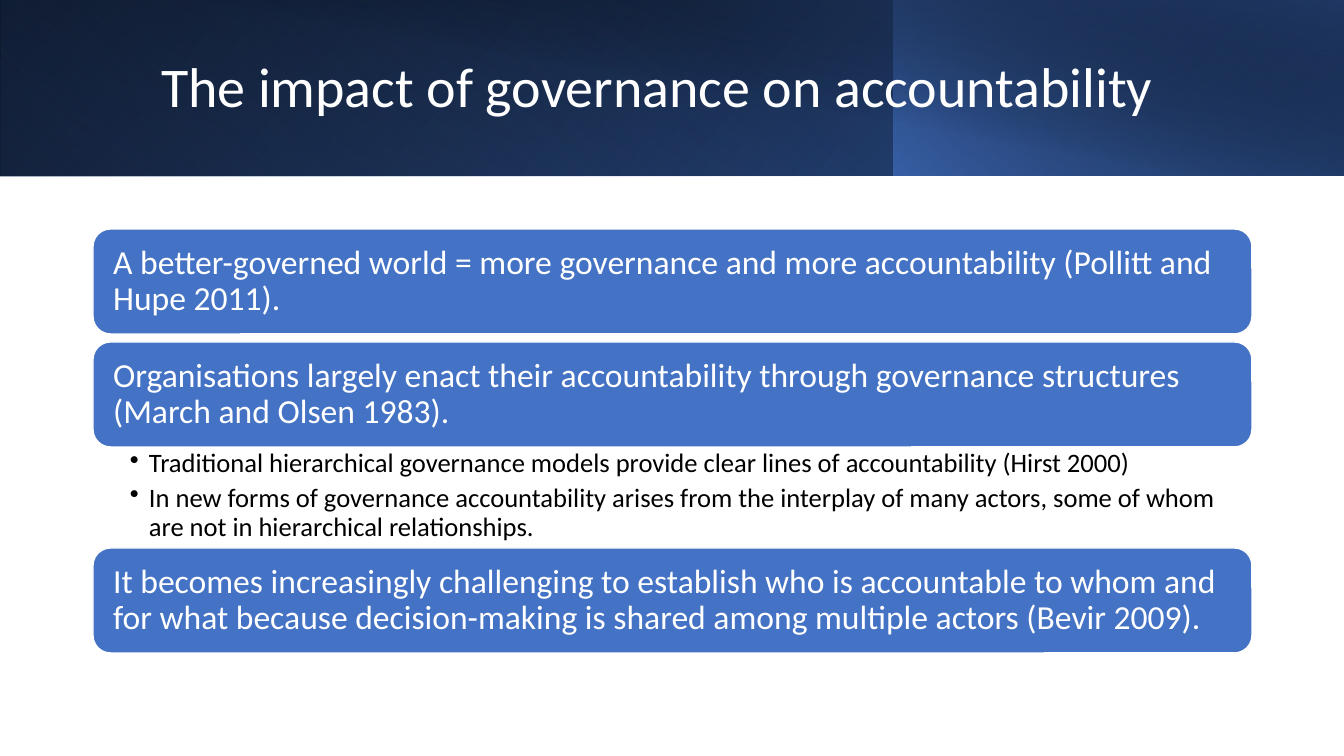
import pptx
import pptx.dml.color
import pptx.enum.shapes
import pptx.enum.text
import pptx.oxml
import pptx.oxml.ns
import pptx.util

PX = 914400 / 100.8
WHITE = pptx.dml.color.RGBColor(0xFF, 0xFF, 0xFF)
BLACK = pptx.dml.color.RGBColor(0x00, 0x00, 0x00)
BLUE = pptx.dml.color.RGBColor(0x44, 0x72, 0xC4)
NAVY = pptx.dml.color.RGBColor(0x20, 0x38, 0x64)
MID_BLUE = pptx.dml.color.RGBColor(0x2F, 0x55, 0x97)
SHAPE = pptx.enum.shapes.MSO_SHAPE
ANCHOR = pptx.enum.text.MSO_ANCHOR


def px(*lengths):
    return [pptx.util.Emu(round(length * PX)) for length in lengths]


def format_text(frame, size, color, space_after, anchor, insets):
    """Set the frame's layout and the look of all its paragraphs; insets run left, top, right, bottom."""
    frame.word_wrap = True
    frame.auto_size = pptx.enum.text.MSO_AUTO_SIZE.NONE
    frame.vertical_anchor = anchor
    (frame.margin_left, frame.margin_top,
     frame.margin_right, frame.margin_bottom) = px(*insets)
    for paragraph in frame.paragraphs:
        paragraph.alignment = pptx.enum.text.PP_ALIGN.LEFT
        paragraph.line_spacing = 0.9
        paragraph.space_after = pptx.util.Pt(space_after)
        paragraph.font.name = "Calibri"
        paragraph.font.size = pptx.util.Pt(size)
        paragraph.font.color.rgb = color


deck = pptx.Presentation()
deck.slide_width, deck.slide_height = px(1344, 756)
slide = deck.slides.add_slide(deck.slide_layouts[5])

title = slide.shapes.title
title.left, title.top, title.width, title.height = px(151, 32, 1091, 114)
title.text_frame.text = "The impact of governance on accountability"
format_text(title.text_frame, 40, WHITE, 0, ANCHOR.MIDDLE, (10, 5, 10, 5))

# Header layers: box, rotation, mirrored, gradient angle, (position, colour, opacity) stops
header_layers = [
    ((0, 0, 1344, 176), 0, True, 140, [(0, BLACK, 100), (100, MID_BLUE, 100)]),
    ((0, 0, 895, 176), 180, True, 230, [(20, BLUE, 0), (100, NAVY, 55)]),
    ((894, 0, 450, 176), 0, True, 220, [(0, BLUE, 66), (100, BLACK, 30)]),
    ((50, 0, 1294, 176), 0, False, 280, [(50, BLACK, 0), (99, NAVY, 52)]),
]
for box, rotation, mirrored, angle, stops in header_layers:
    layer = slide.shapes.add_shape(SHAPE.RECTANGLE, *px(*box))
    layer.shadow.inherit = False
    layer.line.fill.background()
    layer.rotation = rotation
    properties = layer.element.spPr
    if mirrored:
        properties.find(pptx.oxml.ns.qn("a:xfrm")).set("flipH", "1")
    stop_xml = "".join(
        f'<a:gs pos="{position * 1000}"><a:srgbClr val="{color}">'
        f'<a:alpha val="{opacity * 1000}"/></a:srgbClr></a:gs>'
        for position, color, opacity in stops)
    gradient = pptx.oxml.parse_xml(
        f'<a:gradFill {pptx.oxml.ns.nsdecls("a")} rotWithShape="1"><a:gsLst>{stop_xml}</a:gsLst>'
        f'<a:lin ang="{angle * 60000}" scaled="0"/></a:gradFill>')
    properties.find(pptx.oxml.ns.qn("a:prstGeom")).addnext(gradient)
    title.element.addprevious(layer.element)

statements = [
    (229, "A better-governed world = more governance and more accountability (Pollitt and Hupe 2011)."),
    (342, "Organisations largely enact their accountability through governance structures "
          "(March and Olsen 1983)."),
    (548, "It becomes increasingly challenging to establish who is accountable to whom and for what "
          "because decision-making is shared among multiple actors (Bevir 2009)."),
]
for top, statement in statements:
    panel = slide.shapes.add_shape(SHAPE.ROUNDED_RECTANGLE, *px(93, top, 1159, 105))
    panel.shadow.inherit = False
    panel.fill.solid()
    panel.fill.fore_color.rgb = BLUE
    panel.line.color.rgb = WHITE
    panel.line.width = pptx.util.Pt(1)
    panel.text_frame.text = statement
    format_text(panel.text_frame, 24, WHITE, 0, ANCHOR.MIDDLE, (15, 15, 15, 15))

details = slide.shapes.add_textbox(*px(93, 447, 1159, 102)).text_frame
details.text = "\n".join([
    "Traditional hierarchical governance models provide clear lines of accountability (Hirst 2000)",
    "In new forms of governance accountability arises from the interplay of many actors, "
    "some of whom are not in hierarchical relationships.",
])
format_text(details, 19, BLACK, 4, ANCHOR.TOP, (37, 3, 19, 3))
hanging_indent = px(19)[0]
for paragraph in details.paragraphs:
    paragraph.level = 1
    bullet_properties = paragraph._p.get_or_add_pPr()
    bullet_properties.set("marL", str(hanging_indent))
    bullet_properties.set("indent", str(-hanging_indent))
    bullet = pptx.oxml.parse_xml(f'<a:buChar {pptx.oxml.ns.nsdecls("a")} char="•"/>')
    bullet_properties.find(pptx.oxml.ns.qn("a:defRPr")).addprevious(bullet)

deck.save("out.pptx")
